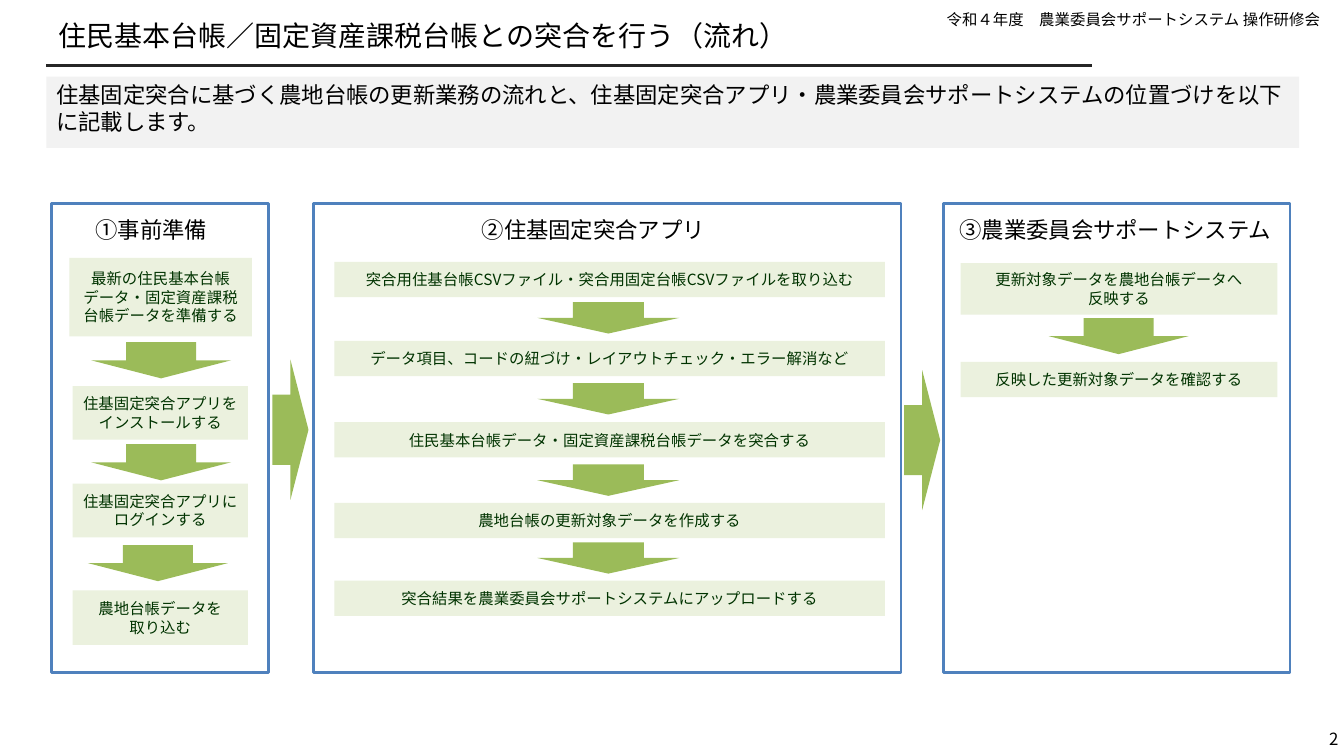
from dataclasses import dataclass

import pptx
import pptx.dml.color
import pptx.enum.shapes
import pptx.enum.text
import pptx.oxml.ns
import pptx.util
from lxml import etree
from pptx.dml.color import RGBColor
from pptx.enum.shapes import MSO_SHAPE
from pptx.enum.text import MSO_ANCHOR, PP_ALIGN
from pptx.util import Cm

FONT = "Noto Sans CJK JP"
BLACK = RGBColor(0x00, 0x00, 0x00)
WHITE = RGBColor(0xFF, 0xFF, 0xFF)
RULE = RGBColor(0x26, 0x26, 0x26)
LEAD_GRAY = RGBColor(0xF2, 0xF2, 0xF2)
PANEL_BLUE = RGBColor(0x4F, 0x81, 0xBD)
ARROW_GREEN = RGBColor(0x9B, 0xBB, 0x59)
STEP_GREEN = RGBColor(0xEB, 0xF1, 0xDE)
STEP_TEXT = RGBColor(0x00, 0x33, 0x00)

PANEL_TOP, PANEL_HEIGHT = 5.13, 11.81
HEADING_TOP, HEADING_HEIGHT = 5.33, 0.94


@dataclass
class Box:
    left: float
    top: float
    width: float
    height: float

    def lengths(self) -> tuple:
        return Cm(self.left), Cm(self.top), Cm(self.width), Cm(self.height)


@dataclass
class Step:
    box: Box
    text: str


@dataclass
class Arrow:
    """Arrow placed by its centre; length runs along its direction."""
    x: float
    y: float
    length: float = 0.91
    breadth: float = 3.53
    rotation: int = 90


@dataclass
class Panel:
    left: float
    width: float
    heading: str
    heading_left: float
    heading_width: float
    steps: list[Step]
    arrows: list[Arrow]


APP_STEPS = [
    (6.60, "突合用住基台帳CSVファイル・突合用固定台帳CSVファイルを取り込む"),
    (8.59, "データ項目、コードの紐づけ・レイアウトチェック・エラー解消など"),
    (10.64, "住民基本台帳データ・固定資産課税台帳データを突合する"),
    (12.67, "農地台帳の更新対象データを作成する"),
    (14.63, "突合結果を農業委員会サポートシステムにアップロードする"),
]

PANELS = [
    Panel(1.30, 5.46, "①事前準備", 2.16, 3.78, [
        Step(Box(1.75, 6.50, 4.60, 1.98),
             "最新の住民基本台帳データ・固定資産課税台帳データを準備する"),
        Step(Box(1.83, 9.73, 4.42, 1.35), "住基固定突合アプリを\nインストールする"),
        Step(Box(1.83, 12.19, 4.42, 1.35), "住基固定突合アプリに\nログインする"),
        Step(Box(1.83, 14.88, 4.42, 1.37), "農地台帳データを\n取り込む"),
    ], [Arrow(4.06, 9.08), Arrow(4.06, 11.65), Arrow(3.98, 14.19)]),
    Panel(7.90, 14.81, "②住基固定突合アプリ", 11.89, 6.93,
          [Step(Box(8.43, top, 13.87, 0.89), text) for top, text in APP_STEPS],
          [Arrow(15.33, y, 0.79, 3.58) for y in (8.01, 10.05, 12.10, 14.06)]),
    Panel(23.77, 8.74, "③農業委員会サポートシステム", 23.93, 8.53, [
        Step(Box(24.21, 6.63, 7.98, 1.30),
             "更新対象データを農地台帳データへ\n反映する"),
        Step(Box(24.21, 9.12, 7.98, 0.89), "反映した更新対象データを確認する"),
    ], [Arrow(28.19, 8.47)]),
]

PANEL_LINKS = [Arrow(7.32, 10.83, rotation=0), Arrow(23.24, 11.09, rotation=0)]


def write(shape, text: str, size: int, color: RGBColor = BLACK,
          align: PP_ALIGN = PP_ALIGN.LEFT,
          anchor: MSO_ANCHOR = MSO_ANCHOR.TOP) -> None:
    tf = shape.text_frame
    tf.word_wrap = True
    tf.auto_size = pptx.enum.text.MSO_AUTO_SIZE.NONE
    tf.vertical_anchor = anchor
    tf.text = text
    for p in tf.paragraphs:
        p.alignment = align
        p.line_spacing = pptx.util.Pt(size * 1.2)
        p.font.size = pptx.util.Pt(size)
        p.font.name = FONT
        p.font.color.rgb = color
        # East Asian typeface
        props = p._p.get_or_add_pPr().get_or_add_defRPr()
        etree.SubElement(props, pptx.oxml.ns.qn("a:ea"), typeface=FONT)


def add_text(s, box: Box, text: str, size: int, **style):
    tb = s.shapes.add_textbox(*box.lengths())
    write(tb, text, size, **style)
    return tb


def add_filled(s, kind: MSO_SHAPE, box: Box, fill: RGBColor):
    sp = s.shapes.add_shape(kind, *box.lengths())
    sp.shadow.inherit = False
    sp.fill.solid()
    sp.fill.fore_color.rgb = fill
    sp.line.fill.background()
    return sp


def add_arrow(s, arrow: Arrow) -> None:
    box = Box(arrow.x - arrow.length / 2, arrow.y - arrow.breadth / 2,
              arrow.length, arrow.breadth)
    sp = add_filled(s, MSO_SHAPE.RIGHT_ARROW, box, ARROW_GREEN)
    sp.rotation = arrow.rotation


def add_panel(s, panel: Panel) -> None:
    frame = add_filled(s, MSO_SHAPE.RECTANGLE,
                       Box(panel.left, PANEL_TOP, panel.width, PANEL_HEIGHT), WHITE)
    frame.line.color.rgb = PANEL_BLUE
    frame.line.width = pptx.util.Pt(2)
    add_text(s, Box(panel.heading_left, HEADING_TOP, panel.heading_width,
                    HEADING_HEIGHT), panel.heading, 16)
    for step in panel.steps:
        sp = add_filled(s, MSO_SHAPE.RECTANGLE, step.box, STEP_GREEN)
        write(sp, step.text, 11, STEP_TEXT, PP_ALIGN.CENTER, MSO_ANCHOR.MIDDLE)
    for arrow in panel.arrows:
        add_arrow(s, arrow)


def main() -> None:
    prs = pptx.Presentation()
    prs.slide_width, prs.slide_height = Cm(33.87), Cm(19.05)
    s = prs.slides.add_slide(prs.slide_layouts[5])

    # Title and rule
    title = s.shapes.title
    title.left, title.top, title.width, title.height = Box(
        1.17, 0.13, 26.37, 1.52).lengths()
    write(title, "住民基本台帳／固定資産課税台帳との突合を行う（流れ）", 20,
          anchor=MSO_ANCHOR.MIDDLE)
    tf = title.text_frame
    tf.margin_left = Cm(0.3)
    tf.margin_top = tf.margin_right = tf.margin_bottom = 0
    rule = s.shapes.add_connector(pptx.enum.shapes.MSO_CONNECTOR.STRAIGHT,
                                  Cm(1.17), Cm(1.65), Cm(27.53), Cm(1.65))
    rule.line.color.rgb = RULE
    rule.line.width = pptx.util.Pt(1.5)
    etree.SubElement(rule._element.spPr, pptx.oxml.ns.qn("a:effectLst"))

    # Running header and page number
    add_text(s, Box(0.33, 0.13, 33.2, 0.74),
             "令和４年度　農業委員会サポートシステム 操作研修会", 11,
             align=PP_ALIGN.RIGHT)
    number = add_text(s, Box(32.33, 18.31, 1.4, 0.61), "2", 12,
                      align=PP_ALIGN.RIGHT, anchor=MSO_ANCHOR.MIDDLE)
    tf = number.text_frame
    tf.margin_left = tf.margin_top = tf.margin_right = tf.margin_bottom = 0

    # Lead text
    lead = add_filled(s, MSO_SHAPE.RECTANGLE, Box(1.17, 1.93, 31.57, 1.8), LEAD_GRAY)
    write(lead, "住基固定突合に基づく農地台帳の更新業務の流れと、住基固定突合アプリ・"
                "農業委員会サポートシステムの位置づけを以下に記載します。", 16)

    # Flow
    for panel in PANELS:
        add_panel(s, panel)
    for link in PANEL_LINKS:
        add_arrow(s, link)

    prs.save("out.pptx")


if __name__ == "__main__":
    main()
